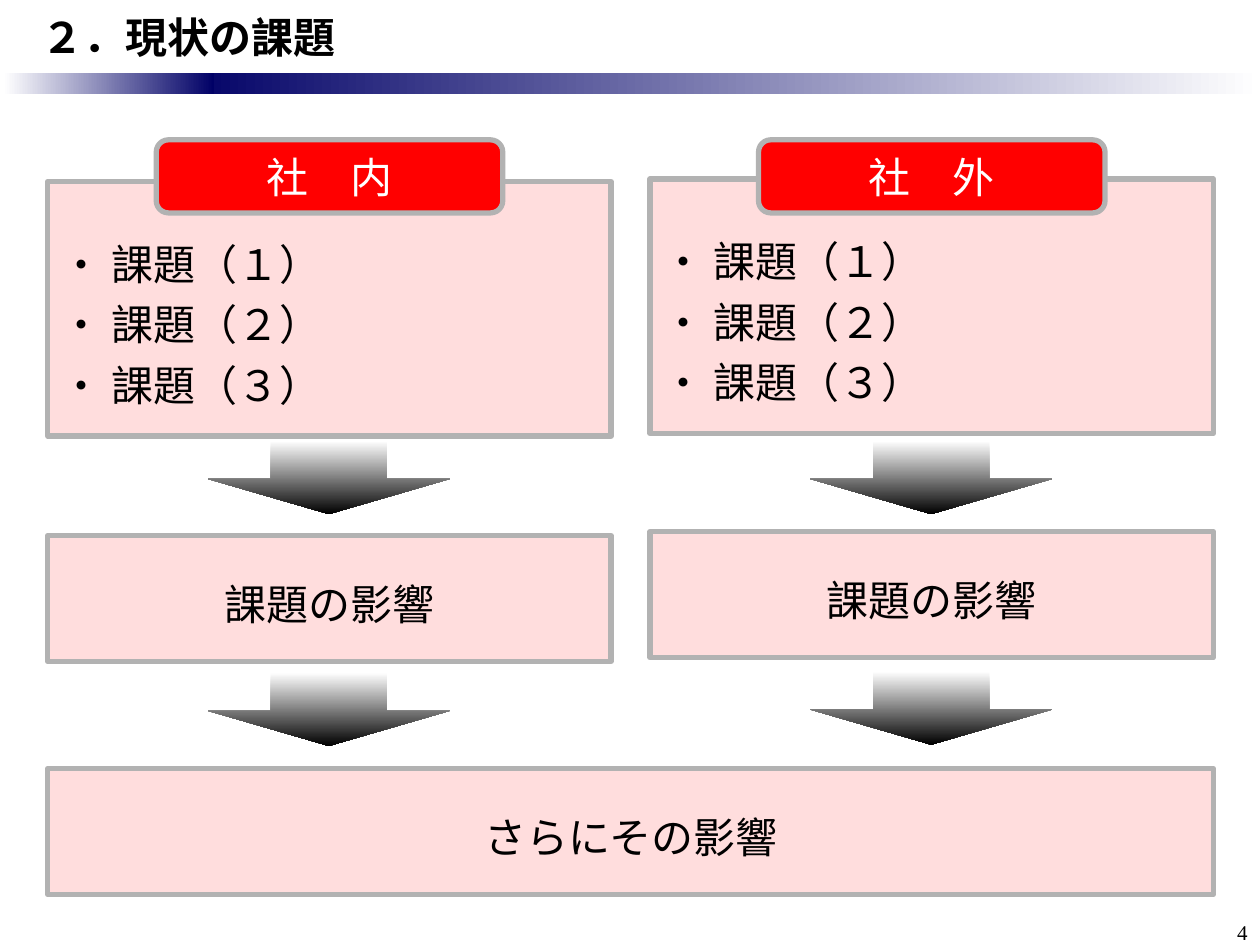
from dataclasses import dataclass

from lxml import etree
from pptx import Presentation
from pptx.dml.color import RGBColor
from pptx.enum.shapes import MSO_SHAPE
from pptx.enum.text import MSO_ANCHOR, PP_ALIGN
from pptx.oxml.ns import qn
from pptx.util import Inches, Pt

RECTANGLE = MSO_SHAPE.RECTANGLE
ROUNDED = MSO_SHAPE.ROUNDED_RECTANGLE
ARROW = MSO_SHAPE.RIGHT_ARROW
LEFT, CENTER, RIGHT = PP_ALIGN.LEFT, PP_ALIGN.CENTER, PP_ALIGN.RIGHT
TOP, MIDDLE = MSO_ANCHOR.TOP, MSO_ANCHOR.MIDDLE
TITLE_ONLY = 5


@dataclass(frozen=True)
class Theme:
    font: str = "Noto Sans CJK JP"
    number_font: str = "Times New Roman"
    text_size: int = 24
    number_size: int = 12
    border_width: int = 3
    black: str = "000000"
    white: str = "FFFFFF"
    navy: str = "000066"
    pink: str = "FFDDDD"
    red: str = "FF0000"
    grey: str = "B2B2B2"


def rgb(value):
    return RGBColor.from_string(value)


def apply(target, values):
    for name, value in values.items():
        setattr(target, name, value)


class SlideBuilder:
    def __init__(self, page, theme):
        self.page = page
        self.theme = theme

    def set_text(self, frame, lines, align=LEFT, anchor=MIDDLE, insets=(0.1, 0.05, 0.1, 0.05),
                 spacing=None, color=None, font=None, size=None, bold=False, wrap=False):
        """Fill a text frame, one paragraph for each line."""
        left, top, right, bottom = (Inches(inset) for inset in insets)
        apply(frame, dict(margin_left=left, margin_top=top, margin_right=right,
                          margin_bottom=bottom, vertical_anchor=anchor, word_wrap=wrap))
        frame.text = "\n".join(lines)
        face = font or self.theme.font
        for para in frame.paragraphs:
            apply(para, dict(alignment=align, line_spacing=spacing))
            for span in para.runs:
                apply(span.font, dict(name=face, size=Pt(size or self.theme.text_size), bold=bold))
                span.font.color.rgb = rgb(color or self.theme.black)
                east_asian = etree.SubElement(span.font._element, qn("a:ea"))
                east_asian.set("typeface", face)

    def title(self, text):
        title = self.page.shapes.title
        apply(title, dict(left=0, top=0, width=Inches(10), height=Inches(0.58)))
        self.set_text(title.text_frame, [text], insets=(0.33, 0.05, 0.1, 0.05),
                      bold=True, wrap=True)

    def page_number(self, number):
        box = self.page.shapes.add_textbox(Inches(9.42), Inches(7.25), Inches(0.58), Inches(0.25))
        self.set_text(box.text_frame, [str(number)], align=RIGHT, anchor=TOP, wrap=True,
                      font=self.theme.number_font, size=self.theme.number_size)

    def shape(self, kind, left, top, width, height):
        shape = self.page.shapes.add_shape(
            kind, Inches(left), Inches(top), Inches(width), Inches(height))
        shape.shadow.inherit = False
        return shape

    def gradient(self, kind, bounds, start, end):
        """Borderless shape that fades from its left side to its right."""
        shape = self.shape(kind, *bounds)
        shape.line.fill.background()
        shape.fill.gradient()
        shape.fill.gradient_angle = 0
        for stop, color, position in zip(shape.fill.gradient_stops, (start, end), (0, 1)):
            stop.color.rgb = rgb(color)
            stop.position = position
        return shape

    def panel(self, bounds, lines, kind=RECTANGLE, fill=None, **text):
        """Bordered shape with text."""
        shape = self.shape(kind, *bounds)
        shape.fill.solid()
        shape.fill.fore_color.rgb = rgb(fill or self.theme.pink)
        shape.line.color.rgb = rgb(self.theme.grey)
        shape.line.width = Pt(self.theme.border_width)
        self.set_text(shape.text_frame, lines, **text)

    def issues(self, left, top, lines):
        self.panel((left, top, 4.47, 2.02), lines, anchor=TOP,
                   insets=(0.1, 0.37, 0.06, 0.05), spacing=1.2)

    def effect(self, left, top, width, text):
        self.panel((left, top, width, 1), [text], align=CENTER, spacing=1.2)

    def heading(self, left, top, text):
        self.panel((left, top, 2.75, 0.58), [text], kind=ROUNDED, fill=self.theme.red,
                   align=CENTER, color=self.theme.white)

    def down_arrow(self, left, top):
        arrow = self.gradient(ARROW, (left, top, 0.58, 1.92), self.theme.white, self.theme.black)
        arrow.rotation = 90
        for index in (0, 1):
            arrow.adjustments[index] = 0.48


def main():
    deck = Presentation()
    apply(deck, dict(slide_width=Inches(10), slide_height=Inches(7.5)))
    theme = Theme()
    builder = SlideBuilder(deck.slides.add_slide(deck.slide_layouts[TITLE_ONLY]), theme)

    # Header and page number
    builder.gradient(RECTANGLE, (1.42, 0.58, 8.58, 0.17), theme.navy, theme.white)
    builder.gradient(RECTANGLE, (0.03, 0.58, 1.67, 0.17), theme.white, theme.navy)
    builder.title("２．現状の課題")
    builder.page_number(4)

    # Two columns: issues, then their effect
    issues = [f"・ 課題（{number}）" for number in "１２３"]
    columns = [
        ("社　内", 0.38, 1.44, 4.25, 4.67),
        ("社　外", 5.16, 1.42, 4.22, 4.66),
    ]
    for name, left, issues_top, effect_top, arrow_top in columns:
        builder.issues(left, issues_top, issues)
        builder.heading(left + 0.86, 1.11, name)
        builder.down_arrow(left + 1.94, 2.83)
        builder.effect(left, effect_top, 4.47, "課題の影響")
        builder.down_arrow(left + 1.94, arrow_top)

    # Shared outcome
    builder.effect(0.38, 6.1, 9.25, "さらにその影響")
    deck.save("out.pptx")


if __name__ == "__main__":
    main()
